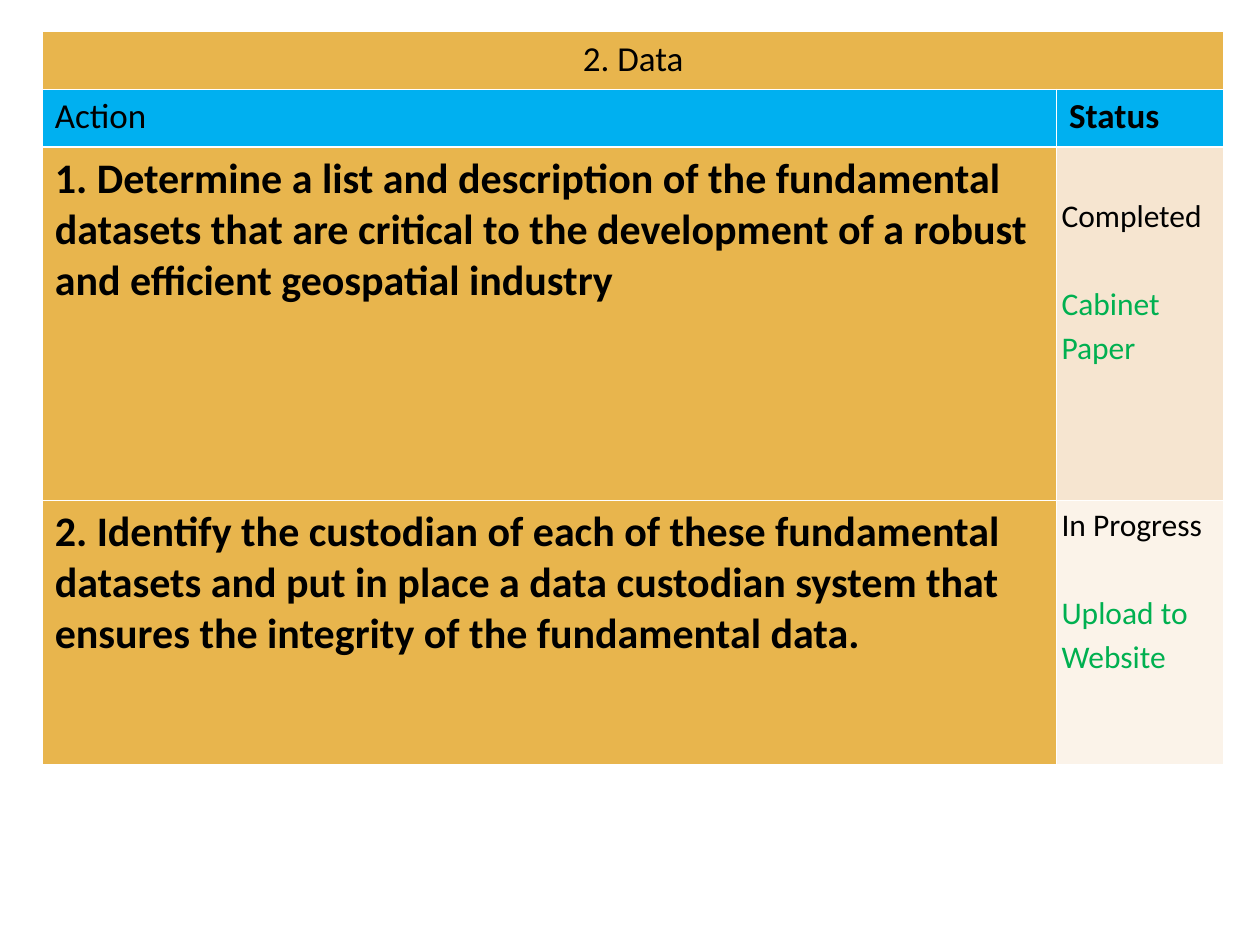
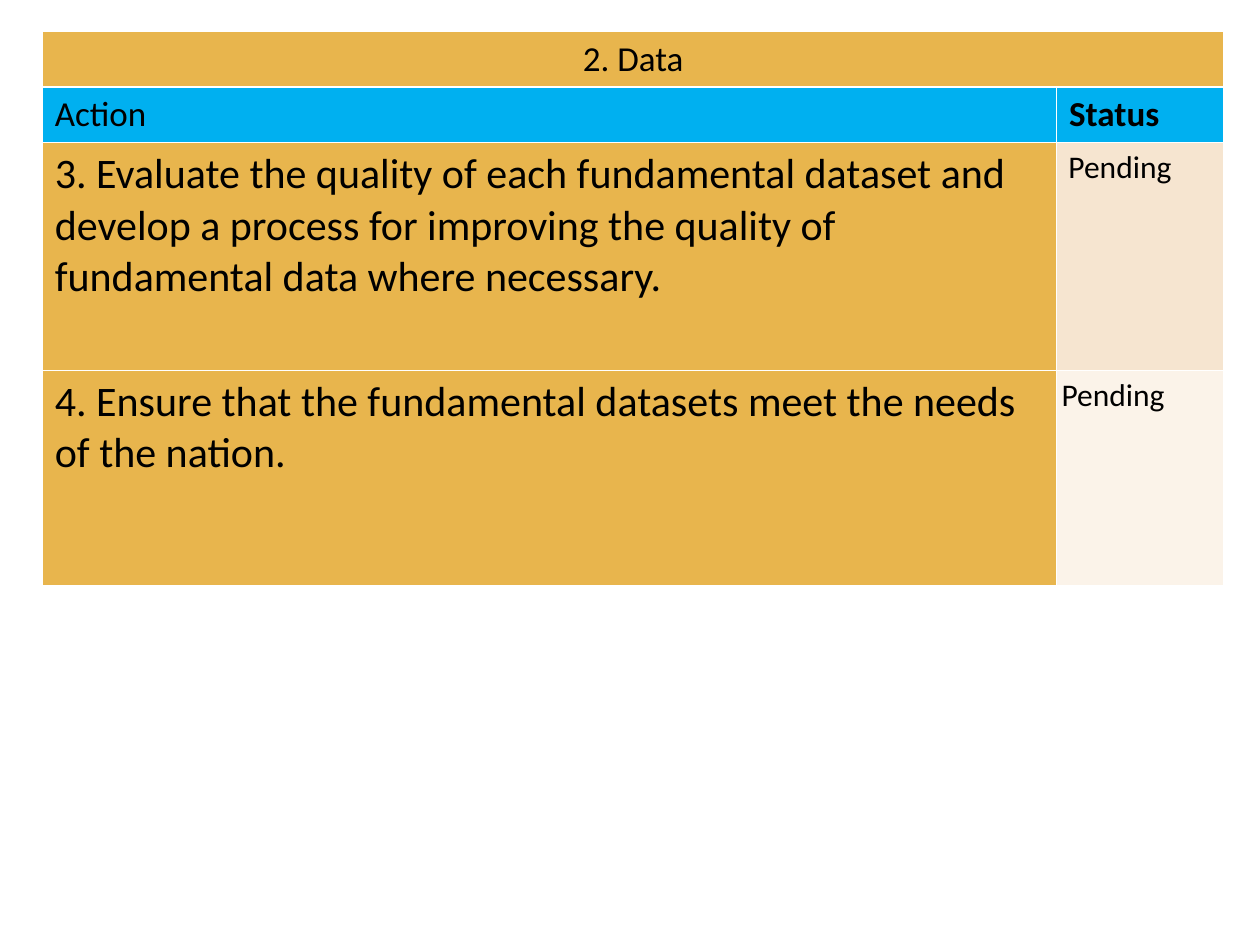
from lxml import etree
from pptx import Presentation
from pptx.dml.color import RGBColor
from pptx.enum.text import PP_ALIGN
from pptx.oxml.ns import qn
from pptx.util import Inches, Pt

CENTER, LEFT = PP_ALIGN.CENTER, PP_ALIGN.LEFT
COLORS = {
    "gold": "E8B54D",
    "blue": "00B0F0",
    "sand": "F6E5D0",
    "cream": "FBF3E9",
    "green": "00B050",
    "black": "000000",
    "white": "FFFFFF",
}
FONT = "Calibri"
STATUS_LINE = 1.15
BLANK_LINE = 25.3
GRID = 100


def add_text(paragraph, text, size=20, bold=False, color="black",
             align=LEFT, spacing=1.0, before=0):
    paragraph.alignment = align
    paragraph.line_spacing = spacing
    paragraph.space_before = Pt(before)
    run = paragraph.add_run()
    run.text = text
    run.font.name = FONT
    run.font.size = Pt(size)
    run.font.bold = bold
    run.font.color.rgb = RGBColor.from_string(COLORS[color])


class ActionDeck:
    def __init__(self):
        self.deck = Presentation()
        self.deck.slide_width = Inches(10)
        self.deck.slide_height = Inches(7.5)
        self.column = self.deck.slide_width / GRID
        self.row = self.deck.slide_height / GRID
        self.slide = None

    def new_slide(self):
        self.slide = self.deck.slides.add_slide(self.deck.slide_layouts[6])

    def border(self, cell):
        properties = cell._tc.get_or_add_tcPr()
        for index, side in enumerate(("a:lnL", "a:lnR", "a:lnT", "a:lnB")):
            line = etree.Element(qn(side), w=str(Pt(1)))
            fill = etree.SubElement(line, qn("a:solidFill"))
            etree.SubElement(fill, qn("a:srgbClr"), val=COLORS["white"])
            properties.insert(index, line)

    def fill_cell(self, cell, fill, lines, left=1, right=1, top=0.67, bottom=0.67):
        cell.fill.solid()
        cell.fill.fore_color.rgb = RGBColor.from_string(COLORS[fill])
        cell.margin_left = round(left * self.column)
        cell.margin_right = round(right * self.column)
        cell.margin_top = round(top * self.row)
        cell.margin_bottom = round(bottom * self.row)
        frame = cell.text_frame
        for index, (text, style) in enumerate(lines):
            paragraph = frame.add_paragraph() if index else frame.paragraphs[0]
            add_text(paragraph, text, **style)

    def status_cell(self, cell, fill, lines, left=0.4, top=0):
        styled = [
            (text, dict(size=18, color="green" if index else "black",
                        spacing=STATUS_LINE, before=BLANK_LINE if index else 0))
            for index, text in enumerate(lines)
        ]
        self.fill_cell(cell, fill, styled, left, 0.4, top, 0)

    def action_table(self, heading, actions, heights, bold):
        widths = (80.5, 13.3)
        table = self.slide.shapes.add_table(
            len(heights), len(widths),
            round(3.35 * self.column), round(3.35 * self.row),
            round(sum(widths) * self.column), round(sum(heights) * self.row),
        ).table
        table.first_row = table.horz_banding = False
        for column, width in zip(table.columns, widths):
            column.width = round(width * self.column)
        for row, height in zip(table.rows, heights):
            row.height = round(height * self.row)
        table.cell(0, 0).merge(table.cell(0, 1))
        self.fill_cell(table.cell(0, 0), "gold", [(heading, dict(align=CENTER))])
        self.fill_cell(table.cell(1, 0), "blue", [("Action", {})])
        self.fill_cell(table.cell(1, 1), "blue", [("Status", dict(bold=True))])
        for index, (action, status, inset) in enumerate(actions):
            self.fill_cell(table.cell(index + 2, 0), "gold",
                           [(action, dict(size=24, bold=bold))])
            self.status_cell(table.cell(index + 2, 1),
                             ("sand", "cream")[index % 2], status, **inset)
        for cell in table.iter_cells():
            self.border(cell)


def main():
    pages = [
        dict(
            actions=[
                ("1. Determine a list and description of the fundamental datasets that "
                 "are critical to the development of a robust and efficient geospatial "
                 "industry", ["Completed", "Cabinet Paper"], dict(top=4.7)),
                ("2. Identify the custodian of each of these fundamental datasets and "
                 "put in place a data custodian system that ensures the integrity of "
                 "the fundamental data.", ["In Progress", "Upload to Website"], {}),
            ],
            heights=(6.1, 6.1, 37.4, 28), bold=True,
        ),
        dict(
            actions=[
                ("3. Evaluate the quality of each fundamental dataset and develop a "
                 "process for improving the quality of fundamental data where "
                 "necessary.", ["Pending"], dict(left=0.95)),
                ("4. Ensure that the fundamental datasets meet the needs of the "
                 "nation.", ["Pending"], {}),
            ],
            heights=(5.8, 5.8, 24.1, 22.8), bold=False,
        ),
    ]
    deck = ActionDeck()
    for page in pages:
        deck.new_slide()
        deck.action_table("2. Data", **page)
    deck.deck.save("out.pptx")


if __name__ == "__main__":
    main()
